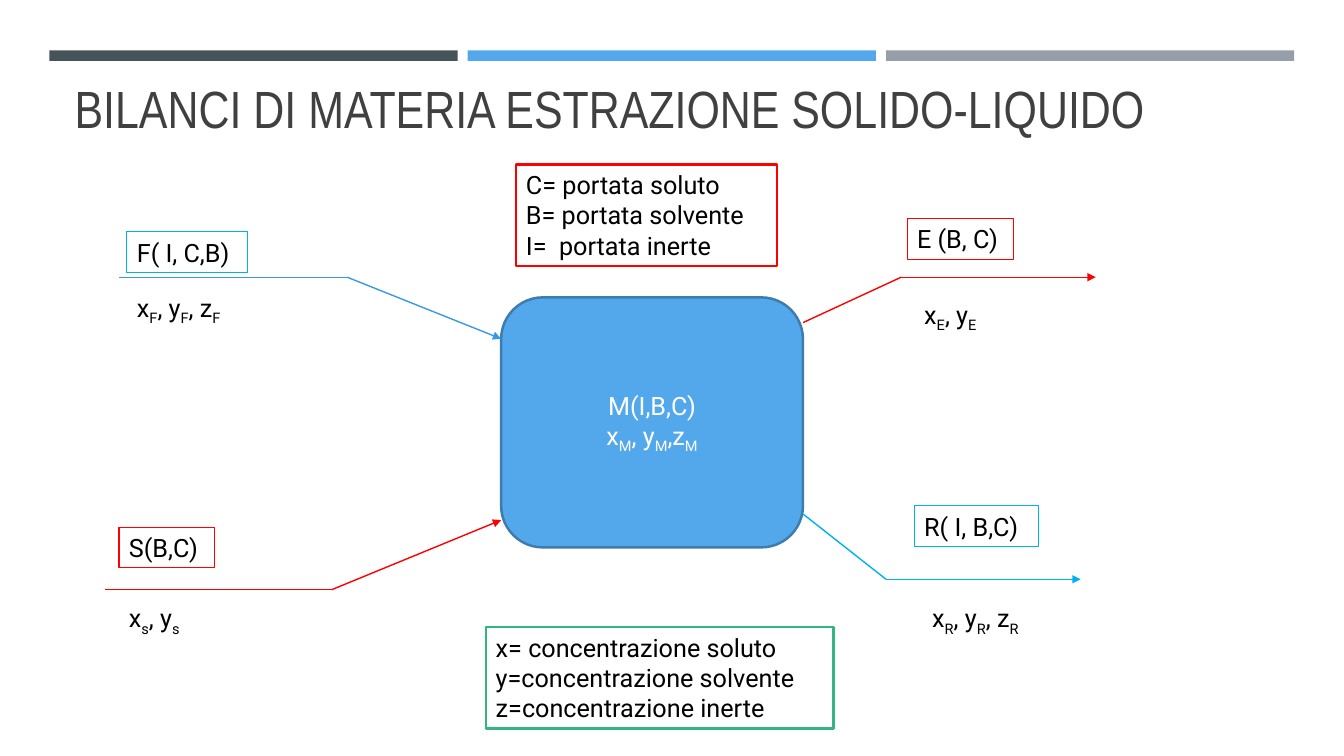
from lxml import etree
from pptx import Presentation
from pptx import util as u
from pptx.dml import color
from pptx.enum import shapes, text
from pptx.oxml import ns

Pt = u.Pt
COLORS = {
    "slate": "465359", "blue": "53A8EB", "grey": "969FA7", "title": "404040",
    "vessel_edge": "3D7CAE", "feed": "379AE8", "red": "FF0000",
    "cyan": "00B0F0", "green": "33B582", "black": "000000", "white": "FFFFFF",
}
LABEL_HEIGHT = 29


def rgb(name):
    return color.RGBColor.from_string(COLORS[name])


def write(frame, lines, size=18, font="Roboto", ink="black",
          align=text.PP_ALIGN.LEFT, anchor=text.MSO_ANCHOR.TOP, spacing=None,
          wrap=False, fit=text.MSO_AUTO_SIZE.SHAPE_TO_FIT_TEXT):
    """Fill a text frame; the letter after an underscore becomes a subscript."""
    frame.word_wrap = wrap
    frame.auto_size = fit
    frame.vertical_anchor = anchor
    for i, line in enumerate(lines):
        paragraph = frame.paragraphs[0] if i == 0 else frame.add_paragraph()
        paragraph.alignment = align
        if spacing:
            paragraph.line_spacing = spacing
        base, *subscripted = line.split("_")
        pieces = [(base, False)]
        for part in subscripted:
            pieces += [(part[0], True), (part[1:], False)]
        for piece, is_subscript in pieces:
            if not piece:
                continue
            run = paragraph.add_run()
            run.text = piece
            run.font.size = Pt(size)
            run.font.name = font
            run.font.color.rgb = rgb(ink)
            if is_subscript:
                run.font._element.set("baseline", "-25000")


def panel(slide, box, fill=None, edge=None, weight=0.75,
          preset=shapes.MSO_SHAPE.RECTANGLE):
    shape = slide.shapes.add_shape(preset, *map(Pt, box))
    shape.shadow.inherit = False
    if fill:
        shape.fill.solid()
        shape.fill.fore_color.rgb = rgb(fill)
    else:
        shape.fill.background()
    if edge:
        shape.line.color.rgb = rgb(edge)
        shape.line.width = Pt(weight)
    else:
        shape.line.fill.background()
    return shape


def segment(slide, start, end, ink, arrow=False):
    line = slide.shapes.add_connector(
        shapes.MSO_CONNECTOR.STRAIGHT, *map(Pt, (*start, *end)))
    line.line.color.rgb = rgb(ink)
    line.line.width = Pt(1)
    if arrow:
        etree.SubElement(line.line._get_or_add_ln(), ns.qn("a:tailEnd"),
                         type="triangle")
    etree.SubElement(line._element.spPr, ns.qn("a:effectLst"))


def header(slide, box):
    left, top, width, height = box
    gap = 7.2
    bar_width = (width - 2 * gap) / 3
    for i, fill in enumerate(("slate", "blue", "grey")):
        panel(slide, (left + i * (bar_width + gap), top, bar_width, 7.5), fill)
    title = slide.shapes.title
    title.left, title.top = Pt(left + 10.8), Pt(top + 23.8)
    title.width, title.height = Pt(868.3), Pt(height - 23.8)
    write(title.text_frame, ["BILANCI DI MATERIA ESTRAZIONE SOLIDO-LIQUIDO"],
          size=37.4, font="Arial Narrow", ink="title", spacing=0.8,
          wrap=True, fit=text.MSO_AUTO_SIZE.NONE)


def vessel(slide, box):
    mixer = panel(slide, box, "blue", "vessel_edge", 1.75,
                  shapes.MSO_SHAPE.ROUNDED_RECTANGLE)
    write(mixer.text_frame, ["M(I,B,C)", "x_M, y_M,z_M"], ink="white",
          align=text.PP_ALIGN.CENTER, anchor=text.MSO_ANCHOR.MIDDLE,
          wrap=True, fit=text.MSO_AUTO_SIZE.NONE)


def stream(slide, origin, route, name, concentrations, name_edge, ink):
    """Draw a bent arrow with its name and concentrations, offset from origin."""
    left, top = origin
    points = [(left + x, top + y) for x, y in route]
    segment(slide, points[0], points[1], ink)
    segment(slide, points[1], points[2], ink, arrow=True)

    label, x, y, width = name
    tag = panel(slide, (left + x, top + y, width, LABEL_HEIGHT), edge=name_edge)
    write(tag.text_frame, [label])

    label, x, y, width = concentrations
    caption = slide.shapes.add_textbox(
        *map(Pt, (left + x, top + y, width, LABEL_HEIGHT)))
    write(caption.text_frame, [label])


def legend(slide, box, edge, lines):
    write(panel(slide, box, "white", edge, 1.75).text_frame, lines)


def balance_slide(prs):
    slide = prs.slides.add_slide(prs.slide_layouts[5])
    header(slide, (35.3, 36, 889.2, 83.6))
    vessel(slide, (358, 212.4, 215.6, 178.6))

    # Each origin is where the stream's horizontal run begins.
    stream(slide, (85, 198), [(0, 0), (163, 0), (273, 44)],
           ("F( I, C,B)", 5.7, -32.4, 86.4), ("x_F, y_F, z_F", 5.7, 7.2, 82.8),
           "cyan", "feed")
    stream(slide, (75, 421.2), [(0, 0), (162, 0), (283, -49.7)],
           ("S(B,C)", 10, -44.6, 68.4), ("x_s, y_s", 10, 5.8, 56.9),
           "red", "red")
    stream(slide, (643.7, 198), [(-70, 32.4), (0, 0), (139, 0)],
           ("E (B, C)", 4.3, -41.8, 76.3), ("x_E, y_E", 9.4, 12.2, 59.8),
           "red", "red")
    stream(slide, (632.9, 413.8), [(-59.2, -46.6), (0, 0), (139, 0)],
           ("R( I, B,C)", 20.2, -52.4, 88.6),
           ("x_R, y_R, z_R", 25.9, 13.2, 87.1), "cyan", "cyan")

    legend(slide, (347, 447.8, 248.4, 72.7), "green",
           ["x= concentrazione soluto", "y=concentrazione solvente",
            "z=concentrazione inerte"])
    legend(slide, (368.6, 117.4, 186.5, 72.7), "red",
           ["C= portata soluto", "B= portata solvente", "I=  portata inerte"])


def main():
    prs = Presentation()
    prs.slide_width, prs.slide_height = Pt(960), Pt(540)
    balance_slide(prs)
    prs.save("out.pptx")


if __name__ == "__main__":
    main()
